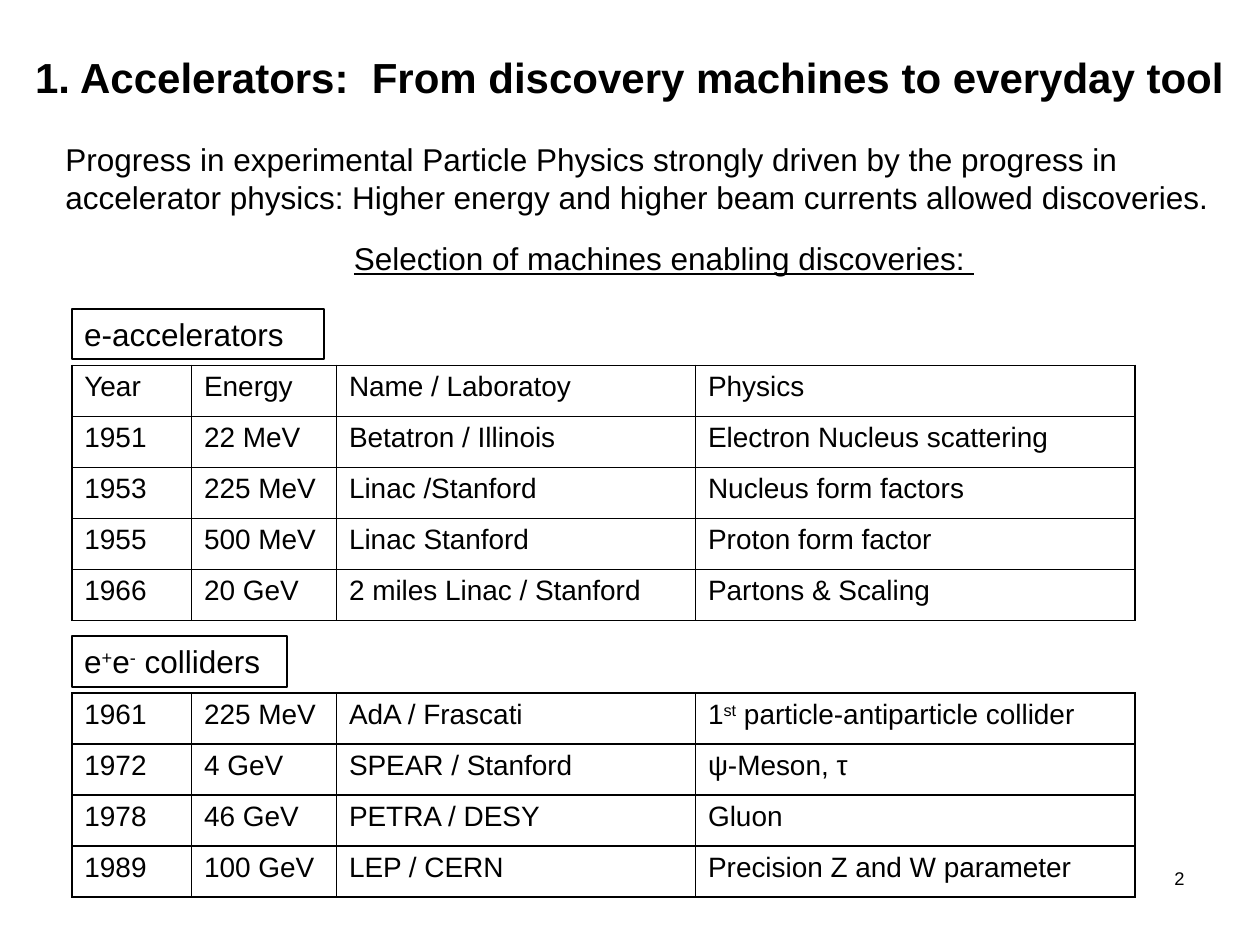
"""Build a slide on accelerators that enabled particle physics discoveries."""
from dataclasses import dataclass

from lxml import etree
from pptx import Presentation
from pptx.dml.color import RGBColor
from pptx.enum.shapes import MSO_SHAPE
from pptx.enum.text import MSO_ANCHOR, PP_ALIGN
from pptx.oxml.ns import qn
from pptx.util import Inches, Pt

RECTANGLE = MSO_SHAPE.RECTANGLE
MIDDLE, TOP = MSO_ANCHOR.MIDDLE, MSO_ANCHOR.TOP
LEFT, RIGHT = PP_ALIGN.LEFT, PP_ALIGN.RIGHT


@dataclass(frozen=True)
class Theme:
    font: str = "Arial"
    ink: RGBColor = RGBColor(0, 0, 0)
    paper: RGBColor = RGBColor(255, 255, 255)
    title: float = 24
    body: float = 18
    cell: float = 16
    number: float = 10.5
    frame_line: float = 1.25
    grid_line: float = 1
    superscript: str = "30000"


THEME = Theme()
WIDTH, HEIGHT = 10, 7.5
MARGIN = 0.57
COLUMNS = (0.95, 1.15, 2.85, 3.49)
ROW = 0.405
LABEL_HEIGHT, LABEL_STEP = 0.4, 0.45

TEXTS = [
    ("1. Accelerators:  From discovery machines to everyday tool",
     (0.18, 0.3, 9.65, 0.62), THEME.title, {"bold": True, "anchor": MIDDLE}),
    ("Progress in experimental Particle Physics strongly driven by the progress in "
     "accelerator physics: Higher energy and higher beam currents allowed discoveries.",
     (0.42, 1.06, 9.42, 0.71), THEME.body, {}),
    ("Selection of machines enabling discoveries: ",
     (2.71, 1.85, 5.78, 0.4), THEME.body, {"underline": True}),
    ("2", (7.17, 6.83, 2.33, 0.52), THEME.number, {"align": RIGHT}),
]

SECTIONS = [
    ("e-accelerators", 2.45, 2, [
        ("Year", "Energy", "Name / Laboratoy", "Physics"),
        ("1951", "22 MeV", "Betatron / Illinois", "Electron Nucleus scattering"),
        ("1953", "225 MeV", "Linac /Stanford", "Nucleus form factors"),
        ("1955", "500 MeV", "Linac Stanford", "Proton form factor"),
        ("1966", "20 GeV", "2 miles Linac / Stanford", "Partons & Scaling"),
    ]),
    ("e^+^e^-^ colliders", 5.05, 1.71, [
        ("1961", "225 MeV", "AdA / Frascati", "1^st^ particle-antiparticle collider"),
        ("1972", "4 GeV", "SPEAR / Stanford", "ψ-Meson, τ"),
        ("1978", "46 GeV", "PETRA / DESY", "Gluon"),
        ("1989", "100 GeV", "LEP / CERN", "Precision Z and W parameter"),
    ]),
]


def write(frame, text, size, bold=False, underline=False, align=LEFT, anchor=TOP):
    """Fill a text frame, raising the pieces enclosed in carets."""
    frame.word_wrap = True
    frame.vertical_anchor = anchor
    para = frame.paragraphs[0]
    para.alignment = align
    for index, piece in enumerate(text.split("^")):
        span = para.add_run()
        span.text = piece
        font = span.font
        font.name, font.size = THEME.font, Pt(size)
        font.bold, font.underline = bold, underline
        font.color.rgb = THEME.ink
        if index % 2:
            font._element.set("baseline", THEME.superscript)


def add_border(cell):
    """Draw a solid line on all four sides of a table cell."""
    properties = cell._tc.get_or_add_tcPr()
    for side in ("a:lnL", "a:lnR", "a:lnT", "a:lnB"):
        line = etree.SubElement(properties, qn(side), w=str(Pt(THEME.grid_line)))
        fill = etree.SubElement(line, qn("a:solidFill"))
        etree.SubElement(fill, qn("a:srgbClr"), val=str(THEME.ink))


def add_label(page, text, top, width):
    """Add a framed section label."""
    label = page.shapes.add_shape(
        RECTANGLE, *map(Inches, (MARGIN, top, width, LABEL_HEIGHT)))
    label.shadow.inherit = False
    label.fill.background()
    label.line.color.rgb = THEME.ink
    label.line.width = Pt(THEME.frame_line)
    write(label.text_frame, text, THEME.body)


def add_grid(page, rows, top):
    """Add a plain ruled table."""
    area = (MARGIN, top, sum(COLUMNS), ROW * len(rows))
    table = page.shapes.add_table(len(rows), len(COLUMNS), *map(Inches, area)).table
    table.first_row = table.horz_banding = False
    for column, width in zip(table.columns, COLUMNS):
        column.width = Inches(width)
    for row, values in zip(table.rows, rows):
        row.height = Inches(ROW)
        for cell, value in zip(row.cells, values):
            add_border(cell)
            cell.fill.background()
            write(cell.text_frame, value, THEME.cell)


def main():
    """Assemble and save the deck."""
    deck = Presentation()
    deck.slide_width, deck.slide_height = Inches(WIDTH), Inches(HEIGHT)
    page = deck.slides.add_slide(deck.slide_layouts[6])
    page.background.fill.solid()
    page.background.fill.fore_color.rgb = THEME.paper
    for text, area, size, style in TEXTS:
        box = page.shapes.add_textbox(*map(Inches, area))
        write(box.text_frame, text, size, **style)
    for label, top, width, rows in SECTIONS:
        add_label(page, label, top, width)
        add_grid(page, rows, top + LABEL_STEP)
    deck.save("out.pptx")


if __name__ == "__main__":
    main()
